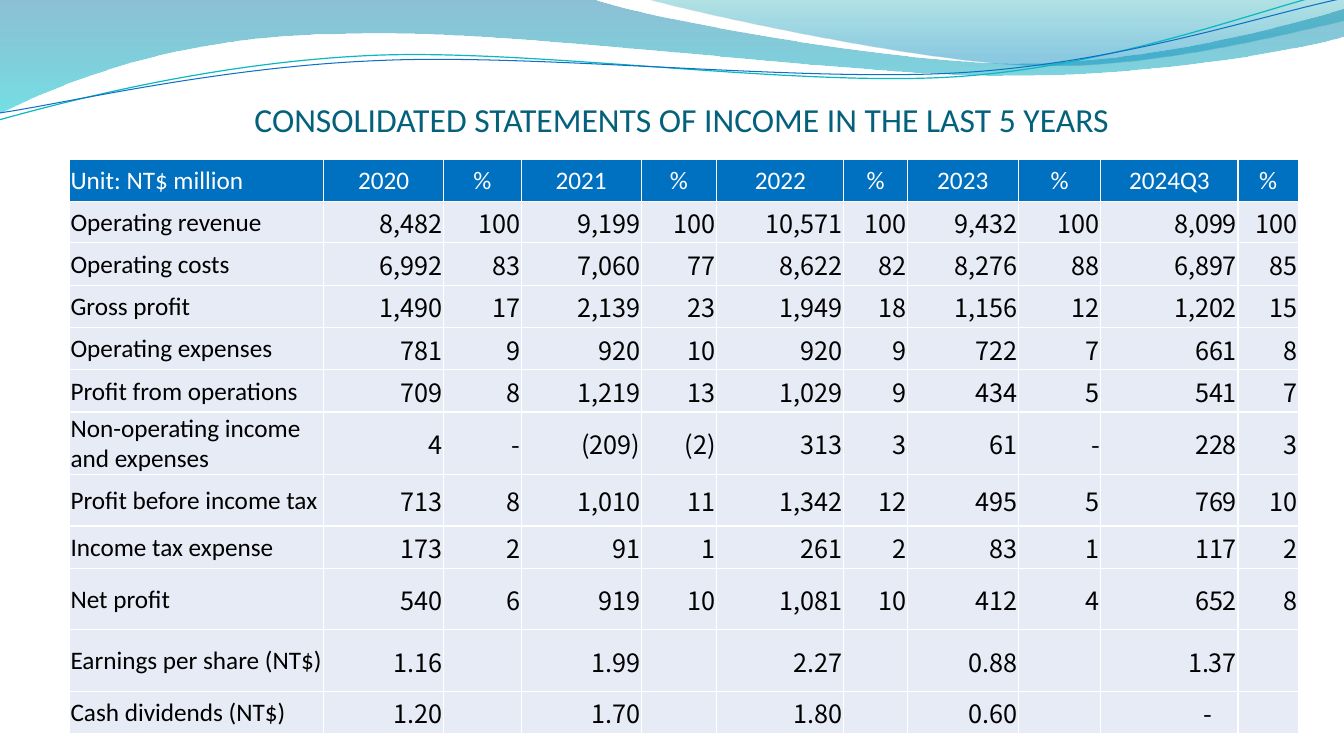
from math import cos, radians, sin

from lxml import etree
from pptx import Presentation
from pptx.dml.color import RGBColor
from pptx.enum.text import MSO_ANCHOR, MSO_AUTO_SIZE, PP_ALIGN
from pptx.oxml.ns import qn
from pptx.util import Inches, Pt

LEFT, CENTER, RIGHT = PP_ALIGN.LEFT, PP_ALIGN.CENTER, PP_ALIGN.RIGHT
MIDDLE, BOTTOM = MSO_ANCHOR.MIDDLE, MSO_ANCHOR.BOTTOM
NO_AUTOFIT = MSO_AUTO_SIZE.NONE
LABEL_FONT, NUMBER_FONT = "Calibri", "Noto Sans CJK SC"
WHITE, BLACK, TEAL = "FFFFFF", "000000", "04617B"
HEADER_FILL, BODY_FILL = "0070C0", "E7EBF5"
STRAND_TILT = -2.7

BANDS = [
    ((0, -0.01),
     [(5.87, -0.01), (6.34, 0.17, 8.85, 0.63, 10.11, 0.63),
      (11.38, 0.63, 12.78, 0.26, 13.33, 0.09), (13.35, 0.36),
      (13.11, 0.44, 11.6, 0.76, 9.94, 0.75), (8.29, 0.75, 5.09, 0.28, 3.43, 0.34),
      (1.72, 0.35, 0.61, 0.83, -0.01, 1.13), (0, -0.01)],
     [(0, "0074A1", 45), (1, "00C6CF", 55)]),
    ((6.39, -0.01),
     [(6.79, 0.11, 9.09, 0.62, 10.25, 0.65), (11.41, 0.69, 12.82, 0.32, 13.33, 0.21),
      (13.33, 0), (6.39, -0.01)],
     [(0, "00A1A9", 30), (0.8, "008BBF", 45)]),
]
STRANDS = [
    ((-0.01, 1.19),
     [(0.64, 1.01, 2.11, 0.62, 3.69, 0.55), (5.27, 0.48, 7.9, 0.87, 9.5, 0.76),
      (11.1, 0.65, 12.52, 0.08, 13.31, -0.1)],
     (6.65, 0.57), "0AB8BF", 0.85),
    ((0, 1.12),
     [(0.63, 1.03, 2.18, 0.66, 3.78, 0.6), (5.37, 0.53, 7.96, 0.82, 9.55, 0.72),
      (11.15, 0.62, 12.55, 0.14, 13.34, -0.02)],
     (6.67, 0.59), "0F6FC6", 0.75),
]

COLUMN_WIDTHS = [2.52, 1.19, 0.77, 1.19, 0.75, 1.26, 0.63, 1.1, 0.82, 1.36, 0.6]
ROW_HEIGHTS = [0.42, 0.41] + [0.42] * 4 + [0.61, 0.51, 0.42, 0.61, 0.61, 0.42]
STATEMENT = [
    ["Unit: NT$ million", "2020", "%", "2021", "%", "2022", "%", "2023", "%", "2024Q3", "%"],
    ["Operating revenue", "8,482", "100", "9,199", "100", "10,571", "100", "9,432", "100",
     "8,099", "100"],
    ["Operating costs", "6,992", "83", "7,060", "77", "8,622", "82", "8,276", "88", "6,897", "85"],
    ["Gross profit", "1,490", "17", "2,139", "23", "1,949", "18", "1,156", "12", "1,202", "15"],
    ["Operating expenses", "781", "9", "920", "10", "920", "9", "722", "7", "661", "8"],
    ["Profit from operations", "709", "8", "1,219", "13", "1,029", "9", "434", "5", "541", "7"],
    ["Non-operating income and expenses", "4", "-", "(209)", "(2)", "313", "3", "61", "-",
     "228", "3"],
    ["Profit before income tax", "713", "8", "1,010", "11", "1,342", "12", "495", "5", "769", "10"],
    ["Income tax expense", "173", "2", "91", "1", "261", "2", "83", "1", "117", "2"],
    ["Net profit", "540", "6", "919", "10", "1,081", "10", "412", "4", "652", "8"],
    ["Earnings per share (NT$)", "1.16", "", "1.99", "", "2.27", "", "0.88", "", "1.37", ""],
    ["Cash dividends (NT$)", "1.20", "", "1.70", "", "1.80", "", "0.60", "", "-　", ""],
]


def color(hex_text):
    """Return the colour for a hex string."""
    return RGBColor.from_string(hex_text)


def write_text(frame, text, size=18, font=LABEL_FONT, ink=BLACK, align=LEFT):
    """Fill a text frame with one formatted paragraph."""
    para = frame.paragraphs[0]
    para.alignment = align
    span = para.add_run()
    span.text = text
    span.font.size = Pt(size)
    span.font.name = font
    span.font.bold = False
    span.font.color.rgb = color(ink)


def turn(point, pivot, degrees):
    """Return a point turned clockwise about a pivot."""
    x, y = point[0] - pivot[0], point[1] - pivot[1]
    c, s = cos(radians(degrees)), sin(radians(degrees))
    return pivot[0] + x * c - y * s, pivot[1] + x * s + y * c


def add_outline(slide, left, top, start, segments, close, pivot=(0, 0), tilt=0):
    """Add a freeform of lines and cubic curves, tilted about a pivot."""
    points = [start] + [part[k:k + 2] for part in segments for k in range(0, len(part), 2)]
    first, *rest = [(Inches(x), Inches(y))
                    for x, y in (turn(point, pivot, -tilt) for point in points)]
    builder = slide.shapes.build_freeform(*first, scale=1.0)
    builder.add_line_segments(rest, close=close)
    shape = builder.convert_to_shape(Inches(left), Inches(top))
    shape.rotation = tilt
    shape.shadow.inherit = False
    steps = iter(list(shape.element.iter(qn("a:lnTo"))))
    for part in segments:
        step = next(steps)
        if len(part) == 6:
            step.tag = qn("a:cubicBezTo")
            for follower in (next(steps), next(steps)):
                step.append(follower[0])
                follower.getparent().remove(follower)
    return shape


def add_waves(slide, left, top):
    """Draw the translucent bands and thin strands of the header."""
    for start, segments, stops in BANDS:
        band = add_outline(slide, left, top, start, segments, True)
        band.line.fill.background()
        band.fill.gradient()
        band.fill.gradient_angle = 270
        for stop, (position, tint, _) in zip(band.fill.gradient_stops, stops):
            stop.position = position
            stop.color.rgb = color(tint)
        for tone, (_, _, opacity) in zip(band.element.iter(qn("a:srgbClr")), stops):
            etree.SubElement(tone, qn("a:alpha"), val=str(opacity * 1000))
    for start, segments, pivot, ink, weight in STRANDS:
        strand = add_outline(slide, left, top, start, segments, False, pivot, STRAND_TILT)
        strand.fill.background()
        strand.line.color.rgb = color(ink)
        strand.line.width = Pt(weight)


def add_title(slide, text, left, top, width, height):
    """Place the title placeholder in front of the waves."""
    title = slide.shapes.title
    slide.shapes.element.append(title.element)
    title.left, title.top = Inches(left), Inches(top)
    title.width, title.height = Inches(width), Inches(height)
    frame = title.text_frame
    frame.word_wrap = True
    frame.auto_size = NO_AUTOFIT
    frame.vertical_anchor = BOTTOM
    frame.margin_left = frame.margin_right = frame.margin_bottom = 0
    frame.margin_top = Inches(0.05)
    write_text(frame, text, size=24, ink=TEAL, align=CENTER)


def style_cell(cell, fill):
    """Give a cell white borders, narrow margins and a fill."""
    properties = cell._tc.get_or_add_tcPr()
    for side in ("lnL", "lnR", "lnT", "lnB"):
        border = etree.SubElement(properties, qn(f"a:{side}"), w=str(Pt(1)))
        solid = etree.SubElement(border, qn("a:solidFill"))
        etree.SubElement(solid, qn("a:srgbClr"), val=WHITE)
    cell.fill.solid()
    cell.fill.fore_color.rgb = color(fill)
    cell.margin_left = cell.margin_right = cell.margin_top = Inches(0.01)
    cell.margin_bottom = 0
    cell.vertical_anchor = MIDDLE


def add_statement(slide, left, top, width, height):
    """Add the income statement table."""
    table = slide.shapes.add_table(len(ROW_HEIGHTS), len(COLUMN_WIDTHS), Inches(left),
                                   Inches(top), Inches(width), Inches(height)).table
    table.first_row = table.horz_banding = False
    for column, column_width in zip(table.columns, COLUMN_WIDTHS):
        column.width = Inches(column_width)
    for row, row_height in zip(table.rows, ROW_HEIGHTS):
        row.height = Inches(row_height)
    for i, texts in enumerate(STATEMENT):
        for j, text in enumerate(texts):
            cell = table.cell(i, j)
            style_cell(cell, BODY_FILL if i else HEADER_FILL)
            if text:
                write_text(cell.text_frame, text,
                           font=NUMBER_FONT if i and j else LABEL_FONT,
                           ink=BLACK if i else WHITE,
                           align=LEFT if j == 0 else RIGHT if i else CENTER)


def main():
    """Build and save the deck."""
    deck = Presentation()
    deck.slide_width, deck.slide_height = Inches(13.33), Inches(7.5)
    page = deck.slides.add_slide(deck.slide_layouts[5])
    add_waves(page, 0, 0)
    add_title(page, "CONSOLIDATED STATEMENTS OF INCOME IN THE LAST 5 YEARS",
              1.24, 0.68, 11.04, 0.7)
    add_statement(page, 0.69, 1.58, 12.19, 5.69)
    deck.save("out.pptx")


if __name__ == "__main__":
    main()
